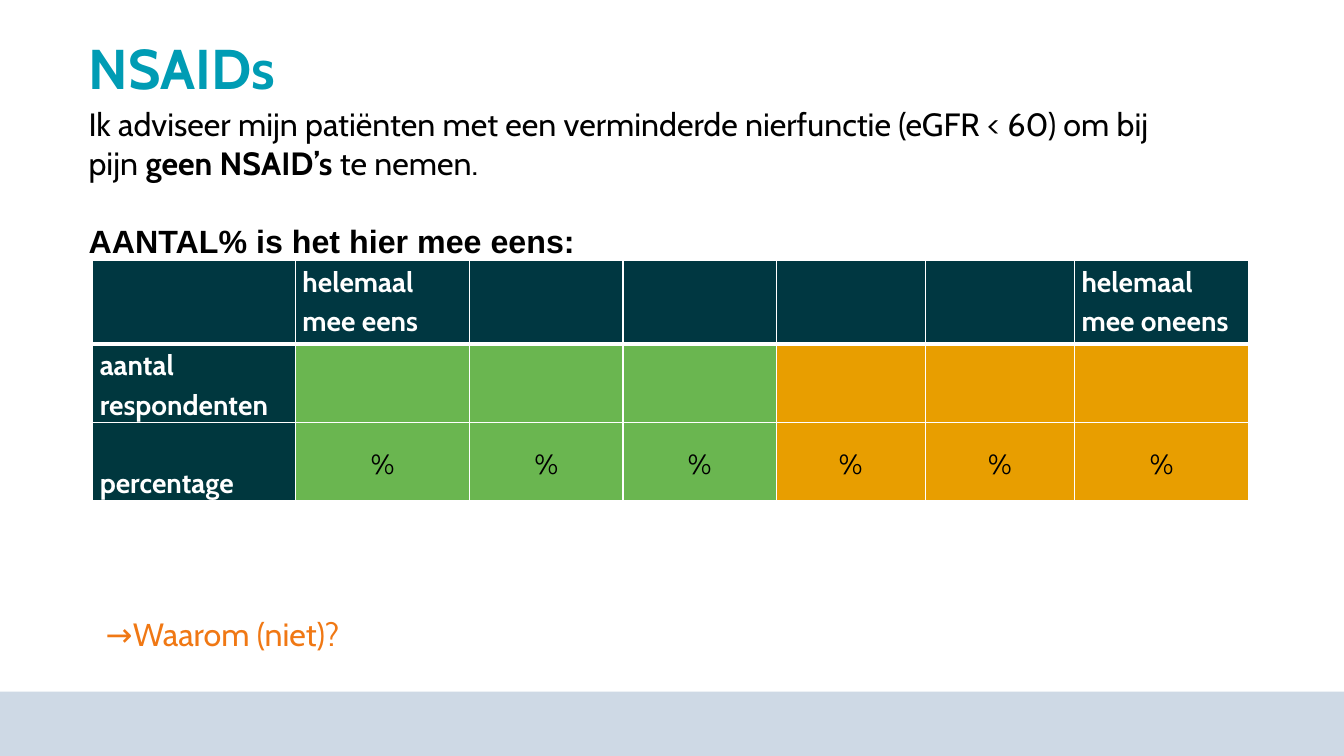
"""Build the NSAIDs survey slide with its answer table."""
from dataclasses import dataclass
from typing import Optional

from lxml.etree import SubElement
from pptx import Presentation
from pptx.dml.color import RGBColor
from pptx.enum.shapes import MSO_SHAPE as Preset
from pptx.enum.text import MSO_ANCHOR as Anchor, PP_ALIGN as Align
from pptx.oxml.ns import qn
from pptx.slide import Slide
from pptx.table import _Cell as Cell
from pptx.text.text import TextFrame
from pptx.util import Emu, Inches, Pt

SLIDE_WIDTH = Inches(13.33)
SLIDE_HEIGHT = Inches(7.5)


@dataclass(frozen=True)
class Theme:
    """Colours, fonts and type sizes of the slide."""
    heading: str = "009CB4"
    body: str = "000000"
    question: str = "F07814"
    band: str = "CED9E5"
    light: str = "FFFFFF"
    header: str = "003741"
    label: str = "00373E"
    agree: str = "6AB650"
    disagree: str = "E89E00"
    font: str = "Cabin"
    summary_font: str = "Arial"
    heading_size: int = 40
    body_size: int = 23
    table_size: int = 20


THEME = Theme()


@dataclass(frozen=True)
class Run:
    """A stretch of text in one style."""
    text: str
    size: int = THEME.body_size
    color: str = THEME.body
    bold: bool = False
    font: str = THEME.font


@dataclass(frozen=True)
class Line:
    """A paragraph made of runs."""
    runs: tuple[Run, ...]
    spacing: Optional[float] = None
    before: int = 0
    align: Align = Align.LEFT


@dataclass(frozen=True)
class Area:
    """A rectangle in percent of the slide."""
    left: float
    top: float
    width: float
    height: float

    def emu(self) -> tuple[Emu, Emu, Emu, Emu]:
        """Return the rectangle as slide lengths."""
        return across(self.left), down(self.top), across(self.width), down(self.height)


@dataclass(frozen=True)
class Passage:
    """A text box with its paragraphs."""
    area: Area
    lines: tuple[Line, ...]
    anchor: Anchor = Anchor.TOP


@dataclass(frozen=True)
class Entry:
    """A table cell: its fill, words and placement."""
    fill: str
    lines: tuple[str, ...] = ()
    color: str = THEME.light
    bold: bool = True
    align: Align = Align.LEFT
    anchor: Anchor = Anchor.TOP
    bottom_border: int = 1


BAND = Area(0, 91.47, 100, 8.53)
TABLE_LEFT, TABLE_TOP = 6.9, 34.4
COLUMNS = (15.08, 12.98, 11.4, 11.4, 11.1, 11.1, 12.98)
ROWS = (11.07, 9.47, 10.4)
ANSWER_FILLS = (THEME.agree,) * 3 + (THEME.disagree,) * 3
HEADINGS = ("", "helemaal mee eens", "", "", "", "", "helemaal mee oneens")

PASSAGES = (
    Passage(Area(5.85, 4.8, 80.12, 9.47), (
        Line((Run("NSAIDs", THEME.heading_size, THEME.heading, True),), spacing=0.9),
    )),
    Passage(Area(5.85, 13.07, 82.15, 22), (
        Line((
            Run("Ik adviseer mijn patiënten met een verminderde nierfunctie "
                "(eGFR < 60) om bij pijn "),
            Run("geen NSAID’s ", bold=True),
            Run("te nemen."),
        )),
        Line((Run("AANTAL% is het hier mee eens:", bold=True,
                  font=THEME.summary_font),), before=28),
    ), Anchor.MIDDLE),
    Passage(Area(7.13, 80.67, 59.19, 6.53), (
        Line((Run("→Waarom (niet)?", color=THEME.question),)),
    )),
)


def across(percent: float) -> Emu:
    """Turn a share of the slide width into a length."""
    return Emu(round(SLIDE_WIDTH * percent / 100))


def down(percent: float) -> Emu:
    """Turn a share of the slide height into a length."""
    return Emu(round(SLIDE_HEIGHT * percent / 100))


def write(frame: TextFrame, lines: tuple[Line, ...]) -> None:
    """Fill a text frame run by run."""
    for index, line in enumerate(lines):
        paragraph = frame.add_paragraph() if index else frame.paragraphs[0]
        paragraph.alignment = line.align
        if line.spacing:
            paragraph.line_spacing = line.spacing
        if line.before:
            paragraph.space_before = Pt(line.before)
        for part in line.runs:
            run = paragraph.add_run()
            run.text = part.text
            run.font.name = part.font
            run.font.size = Pt(part.size)
            run.font.bold = part.bold
            run.font.color.rgb = RGBColor.from_string(part.color)


def add_passage(slide: Slide, passage: Passage) -> None:
    """Place a text box on the slide."""
    frame = slide.shapes.add_textbox(*passage.area.emu()).text_frame
    frame.word_wrap = True
    frame.vertical_anchor = passage.anchor
    write(frame, passage.lines)


def add_band(slide: Slide) -> None:
    """Draw the band along the foot of the slide."""
    band = slide.shapes.add_shape(Preset.RECTANGLE, *BAND.emu())
    band.shadow.inherit = False
    band.fill.solid()
    band.fill.fore_color.rgb = RGBColor.from_string(THEME.band)
    band.line.fill.background()


def draw_cell(cell: Cell, entry: Entry) -> None:
    """Give a table cell its borders, fill and text."""
    properties = cell._tc.get_or_add_tcPr()
    for side, width in zip("LRTB", (1, 1, 1, entry.bottom_border)):
        border = SubElement(properties, qn(f"a:ln{side}"), w=str(Pt(width)))
        SubElement(SubElement(border, qn("a:solidFill")), qn("a:srgbClr"), val=THEME.light)
    cell.fill.solid()
    cell.fill.fore_color.rgb = RGBColor.from_string(entry.fill)
    cell.margin_left = cell.margin_right = Inches(0.07)
    cell.margin_top = cell.margin_bottom = 0
    cell.vertical_anchor = entry.anchor
    write(cell.text_frame, tuple(
        Line((Run(text, THEME.table_size, entry.color, entry.bold),), 1.15, align=entry.align)
        for text in entry.lines))


def survey_entries() -> list[list[Entry]]:
    """List the cells of the survey table row by row."""
    header = [Entry(THEME.header, (text,) if text else (), bottom_border=3)
              for text in HEADINGS]
    counts = [Entry(THEME.label, ("aantal", "respondenten"))]
    counts += [Entry(fill) for fill in ANSWER_FILLS]
    shares = [Entry(THEME.label, ("percentage",), anchor=Anchor.BOTTOM)]
    shares += [Entry(fill, ("%",), THEME.body, False, Align.CENTER, Anchor.MIDDLE)
               for fill in ANSWER_FILLS]
    return [header, counts, shares]


def add_survey(slide: Slide) -> None:
    """Place the survey table on the slide."""
    area = Area(TABLE_LEFT, TABLE_TOP, sum(COLUMNS), sum(ROWS))
    survey = slide.shapes.add_table(len(ROWS), len(COLUMNS), *area.emu()).table
    for column, width in zip(survey.columns, COLUMNS):
        column.width = across(width)
    for row, height, entries in zip(survey.rows, ROWS, survey_entries()):
        row.height = down(height)
        for cell, entry in zip(row.cells, entries):
            draw_cell(cell, entry)


def main() -> None:
    """Build and save the presentation."""
    deck = Presentation()
    deck.slide_width, deck.slide_height = SLIDE_WIDTH, SLIDE_HEIGHT
    slide = deck.slides.add_slide(deck.slide_layouts[6])
    add_band(slide)
    add_survey(slide)
    for passage in PASSAGES:
        add_passage(slide, passage)
    deck.save("out.pptx")


if __name__ == "__main__":
    main()
